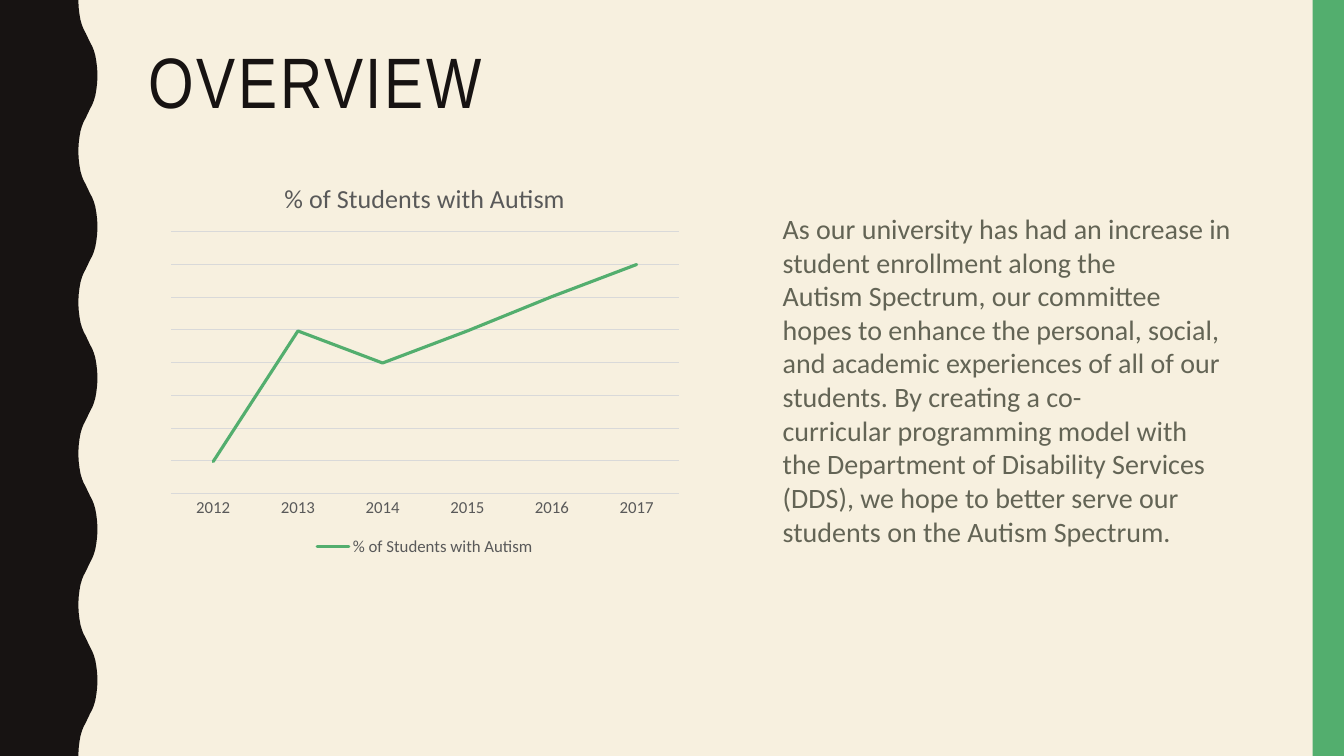
from dataclasses import dataclass

from pptx import Presentation
from pptx.chart.data import CategoryChartData
from pptx.dml.color import RGBColor
from pptx.enum.chart import XL_CHART_TYPE, XL_LEGEND_POSITION, XL_TICK_MARK
from pptx.enum.shapes import MSO_SHAPE
from pptx.enum.text import MSO_ANCHOR, MSO_AUTO_SIZE, PP_ALIGN
from pptx.oxml.ns import qn
from pptx.shapes.base import BaseShape
from pptx.slide import Slide
from pptx.text.text import Font, TextFrame
from pptx.util import Inches, Length, Pt

CREAM = RGBColor(0xF7, 0xF0, 0xDF)
INK = RGBColor(0x17, 0x13, 0x12)
GREEN = RGBColor(0x53, 0xAE, 0x6E)
OLIVE = RGBColor(0x63, 0x64, 0x55)
GRAY = RGBColor(0x59, 0x59, 0x59)
PALE_GRAY = RGBColor(0xD9, 0xD9, 0xD9)
BLACK = RGBColor(0, 0, 0)

SLIDE_WIDTH, SLIDE_HEIGHT = Inches(13.33), Inches(7.5)
SERIES_NAME = "% of Students with Autism"
SHARE_BY_YEAR = {"2012": 14, "2013": 71, "2014": 57, "2015": 71, "2016": 86, "2017": 100}
GRID_STEP = 14.29
TIE = chr(160)
OVERVIEW = (
    f"As our{TIE}university has had{TIE}an increase in student enrollment along the "
    f"Autism{TIE}Spectrum, our{TIE}committee hopes to enhance the personal, social, and "
    "academic experiences of all of our students. By creating a "
    f"co-curricular{TIE}programming model with the Department of Disability Services "
    "(DDS), we hope to better serve our students on the Autism Spectrum."
)
WAVE_COUNT = 5
WAVE_HEIGHT = 100 / WAVE_COUNT
WAVE_MIDDLE = 6.54
QUARTER_WAVE = [
    (5.83, 0), (5.85, 0.93), (5.91, 1.87), (5.99, 2.67),
    (6.1, 3.33), (6.22, 3.87), (6.38, 4.4),
]


def across(percent: float) -> Length:
    """Turn a percentage of the slide width into a length."""
    return Length(round(SLIDE_WIDTH * percent / 100))


def down(percent: float) -> Length:
    """Turn a percentage of the slide height into a length."""
    return Length(round(SLIDE_HEIGHT * percent / 100))


@dataclass(frozen=True)
class Area:
    """A region in percentages of the slide size."""

    left: float
    top: float
    width: float
    height: float

    def lengths(self) -> tuple[Length, Length, Length, Length]:
        """Return left, top, width and height as lengths."""
        return across(self.left), down(self.top), across(self.width), down(self.height)


@dataclass(frozen=True)
class Lettering:
    """The font, size and colour of a piece of text."""

    face: str
    size: float
    color: RGBColor

    def apply(self, font: Font) -> None:
        """Set a font to this lettering."""
        font.name, font.size, font.bold = self.face, Pt(self.size), False
        font.color.rgb = self.color


HEADING = Lettering("Arial Narrow", 51, INK)
BODY = Lettering("Calibri", 20, OLIVE)
CHART_BASE = Lettering("Calibri", 10, BLACK)
CHART_TITLE = Lettering("Calibri", 18.6, GRAY)
CHART_LABEL = Lettering("Calibri", 12, GRAY)

HEADING_AREA = Area(10.28, 5.5, 83.5, 21.73)
CHART_AREA = Area(11.93, 21.47, 39.38, 52.72)
BODY_AREA = Area(57.5, 27.33, 34.88, 46.27)
BAND_AREA = Area(97.67, 0, 2.33, 100)


def paint(shape: BaseShape, color: RGBColor) -> None:
    """Give a shape a flat fill without outline or shadow."""
    shape.shadow.inherit = False
    shape.fill.solid()
    shape.fill.fore_color.rgb = color
    shape.line.fill.background()


def draw_borders(slide: Slide) -> None:
    """Draw the wavy left border and the green right band."""
    half = QUARTER_WAVE + [
        (2 * WAVE_MIDDLE - x, WAVE_HEIGHT / 2 - y) for x, y in reversed(QUARTER_WAVE)
    ]
    edge = half + [(x, WAVE_HEIGHT - y) for x, y in half[-2::-1]]
    outline = [
        (across(x), down(y + wave * WAVE_HEIGHT))
        for wave in range(WAVE_COUNT)
        for x, y in edge
    ]
    builder = slide.shapes.build_freeform(0, 0)
    builder.add_line_segments(outline + [(0, SLIDE_HEIGHT)], close=True)
    paint(builder.convert_to_shape(), INK)
    band = slide.shapes.add_shape(MSO_SHAPE.RECTANGLE, *BAND_AREA.lengths())
    paint(band, GREEN)


def write(frame: TextFrame, words: str, lettering: Lettering, spacing: float, tracking: int = 0) -> None:
    """Write one left-aligned run into a top-anchored frame."""
    frame.word_wrap = True
    frame.vertical_anchor = MSO_ANCHOR.TOP
    paragraph = frame.paragraphs[0]
    paragraph.alignment = PP_ALIGN.LEFT
    paragraph.line_spacing = spacing
    run = paragraph.add_run()
    run.text = words
    lettering.apply(run.font)
    if tracking:
        run._r.get_or_add_rPr().set("spc", str(tracking * 100))


def draw_heading(slide: Slide) -> None:
    """Fill and place the title."""
    heading = slide.shapes.title
    heading.left, heading.top, heading.width, heading.height = HEADING_AREA.lengths()
    heading.text_frame.auto_size = MSO_AUTO_SIZE.NONE
    write(heading.text_frame, "OVERVIEW", HEADING, 0.9, tracking=2)


def draw_chart(slide: Slide) -> None:
    """Draw the line chart of the yearly share of students."""
    enrollment = CategoryChartData()
    enrollment.categories = list(SHARE_BY_YEAR)
    enrollment.add_series(SERIES_NAME, list(SHARE_BY_YEAR.values()))
    chart = slide.shapes.add_chart(
        XL_CHART_TYPE.LINE, *CHART_AREA.lengths(), enrollment
    ).chart
    CHART_BASE.apply(chart.font)

    chart.has_title = True
    caption = chart.chart_title.text_frame.paragraphs[0].add_run()
    caption.text = SERIES_NAME
    CHART_TITLE.apply(caption.font)
    chart.chart_title.include_in_layout = False

    chart.has_legend = True
    chart.legend.position = XL_LEGEND_POSITION.BOTTOM
    chart.legend.include_in_layout = False
    CHART_LABEL.apply(chart.legend.font)

    years, shares = chart.category_axis, chart.value_axis
    years.major_tick_mark = years.minor_tick_mark = XL_TICK_MARK.NONE
    CHART_LABEL.apply(years.tick_labels.font)
    shares.visible = False
    shares.minimum_scale, shares.maximum_scale = 0, 8 * GRID_STEP
    shares.major_unit = GRID_STEP
    shares.has_major_gridlines = True
    for rule in (years.format.line, shares.major_gridlines.format.line):
        rule.color.rgb = PALE_GRAY
        rule.width = Pt(0.75)

    chart.plots[0].vary_by_categories = False
    trend = chart.plots[0].series[0]
    trend.smooth = False
    trend.format.line.color.rgb = GREEN
    trend.format.line.width = Pt(2.25)
    trend._element.spPr.find(qn("a:ln")).set("cap", "rnd")


def draw_body(slide: Slide) -> None:
    """Write the paragraph beside the chart."""
    body = slide.shapes.add_textbox(*BODY_AREA.lengths())
    body.text_frame.auto_size = MSO_AUTO_SIZE.SHAPE_TO_FIT_TEXT
    write(body.text_frame, OVERVIEW, BODY, 1.0)


def main() -> None:
    """Build and save the slide."""
    deck = Presentation()
    deck.slide_width, deck.slide_height = SLIDE_WIDTH, SLIDE_HEIGHT
    slide = deck.slides.add_slide(deck.slide_layouts.get_by_name("Title Only"))
    slide.background.fill.solid()
    slide.background.fill.fore_color.rgb = CREAM
    draw_borders(slide)
    draw_heading(slide)
    draw_chart(slide)
    draw_body(slide)
    deck.save("out.pptx")


if __name__ == "__main__":
    main()
